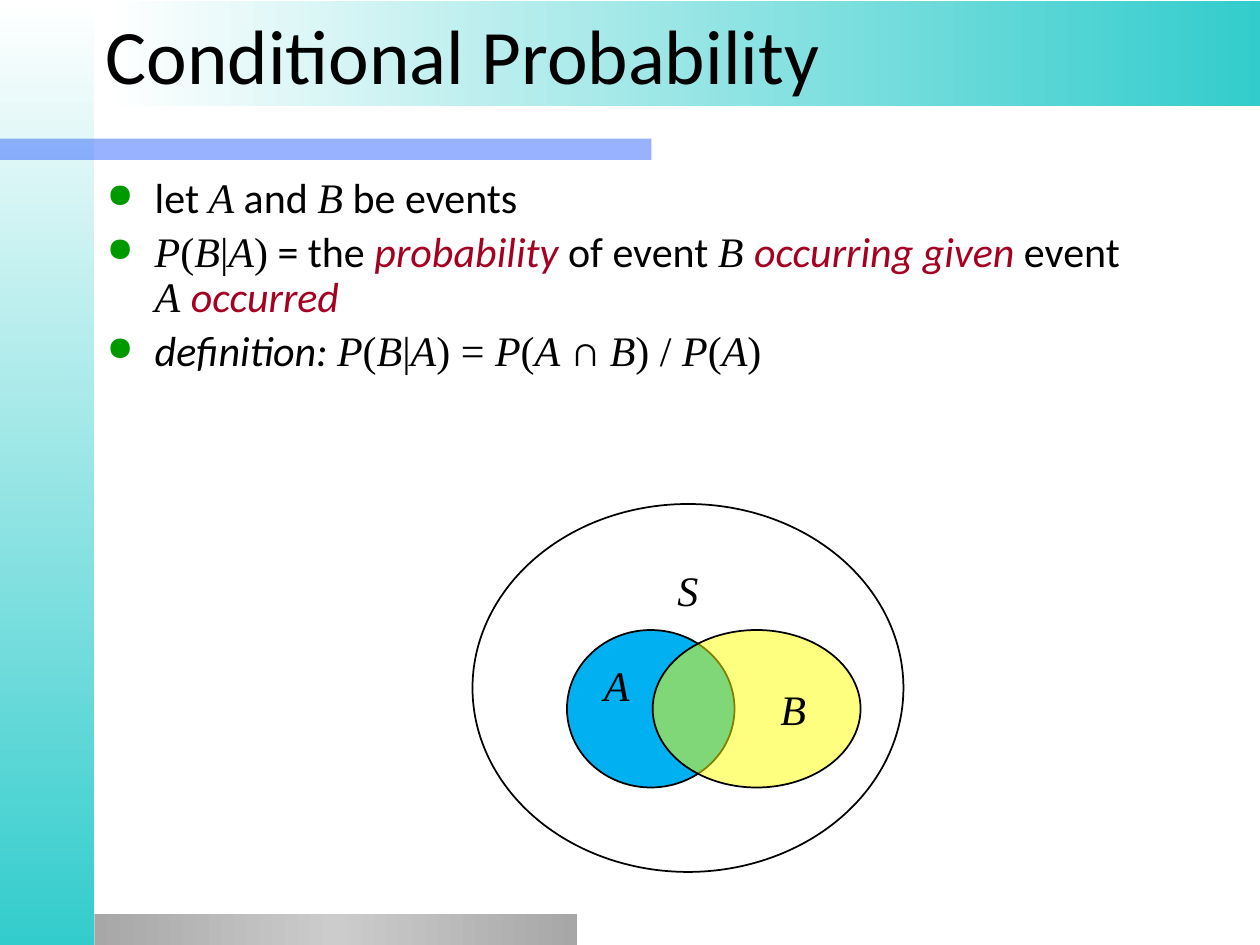
from itertools import groupby
from pptx import Presentation
from pptx.dml.color import RGBColor
from pptx.enum.shapes import MSO_SHAPE
from pptx.enum.text import MSO_ANCHOR, MSO_AUTO_SIZE, PP_ALIGN
from pptx.oxml import parse_xml
from pptx.oxml.ns import nsdecls, qn
from pptx.util import Inches, Pt

RECT, OVAL = MSO_SHAPE.RECTANGLE, MSO_SHAPE.OVAL
TOP, MIDDLE = MSO_ANCHOR.TOP, MSO_ANCHOR.MIDDLE
LEFT, CENTER = PP_ALIGN.LEFT, PP_ALIGN.CENTER
FIXED = MSO_AUTO_SIZE.NONE
WIDE, HIGH = 10, 7.5
SANS, SERIF = "Calibri", "Times New Roman"
BLACK, WHITE, TEAL, RED = "000000", "FFFFFF", "33CCCC", "A50021"
GREY, SILVER = "A7A7A7", "CCCCCC"
STYLES = {
    "plain": (SANS, False, BLACK),
    "slant": (SANS, True, BLACK),
    "key": (SANS, True, RED),
}
GIVEN = ("math", "P(B|A)")
POINTS = [
    [("plain", "let "), ("math", "A"), ("plain", " and "), ("math", "B"),
     ("plain", " be events")],
    [GIVEN, ("plain", " = the "), ("key", "probability"),
     ("plain", " of event "), ("math", "B "), ("key", "occurring given"),
     ("plain", " event "), ("math", "A "), ("key", "occurred")],
    [("slant", "definition: "), GIVEN, ("math", " = P(A "), ("plain", "∩ "),
     ("math", "B) / P(A)")],
]


def color(code):
    """Turn a hex string into a colour."""
    return RGBColor.from_string(code)


def place(shape, box):
    """Set a shape's left, top, width and height in inches."""
    shape.left, shape.top, shape.width, shape.height = map(Inches, box)


def set_font(font, name, size, italic=False, code=BLACK):
    """Set face, size, slant and colour of a font."""
    font.name, font.size, font.italic = name, Pt(size), italic
    font.color.rgb = color(code)


def fade(shape, codes, angle=0):
    """Fill a shape with evenly spaced gradient stops."""
    shape.fill.gradient()
    shape.fill.gradient_angle = angle
    stops = shape._element.spPr.find(".//" + qn("a:gsLst"))
    for stop in list(stops):
        stops.remove(stop)
    for i, code in enumerate(codes):
        spot = 100000 * i // (len(codes) - 1)
        stops.append(parse_xml(
            f'<a:gs {nsdecls("a")} pos="{spot}"><a:srgbClr val="{code}"/></a:gs>'))


def tint(shape, code, share=100):
    """Fill a shape with one colour at a percentage of opacity."""
    shape.fill.solid()
    shape.fill.fore_color.rgb = color(code)
    if share < 100:
        tone = shape._element.spPr.find(qn("a:solidFill")).find(qn("a:srgbClr"))
        tone.append(parse_xml(f'<a:alpha {nsdecls("a")} val="{share * 1000}"/>'))


def add_band(slide, box):
    """Add a rectangle with no outline."""
    band = slide.shapes.add_shape(RECT, *map(Inches, box))
    band.shadow.inherit = False
    band.line.fill.background()
    return band


def add_frame(slide, side):
    """Draw the slide's bands around a left margin of the given width."""
    fade(add_band(slide, (0, 0, side, HIGH)), (WHITE, TEAL), 270)
    tint(add_band(slide, (0, 1.1, 5.17, 0.17)), "3366FF", 50)
    fade(add_band(slide, (side, HIGH - 0.25, 3.83, 0.25)), (GREY, SILVER, GREY))
    fade(add_band(slide, (0.84, 0.01, WIDE - 0.84, 0.83)), (WHITE, TEAL))


def add_title(slide, box, text):
    """Place the title in front of the bands."""
    title = slide.shapes.title
    slide.shapes._spTree.append(title._element)
    place(title, box)
    frame = title.text_frame
    frame.text = text
    frame.auto_size, frame.vertical_anchor = FIXED, MIDDLE
    line = frame.paragraphs[0]
    line.alignment = LEFT
    set_font(line.font, SANS, 44)


def add_run(line, text, style):
    """Add a run in one style."""
    run = line.add_run()
    run.text = text
    name, italic, code = style
    set_font(run.font, name, 24, italic, code)


def add_math(line, text):
    """Add a formula with slanted letters and upright signs."""
    for italic, part in groupby(text, str.isalpha):
        add_run(line, "".join(part), (SERIF, italic, BLACK))


def add_bullet(line):
    """Give a paragraph a hanging green bullet."""
    props = line._p.get_or_add_pPr()
    props.set("marL", str(Inches(0.38)))
    props.set("indent", str(-Inches(0.38)))
    for part in ('buClr><a:srgbClr val="009900"/></a:buClr',
                 'buSzPct val="80000"/', 'buChar char="●"/'):
        head, mark, tail = part.partition(">")
        names = nsdecls("a")
        xml = (f"<a:{head} {names}>{tail}>" if mark
               else f"<a:{head[:-1]} {names}/>")
        props.append(parse_xml(xml))


def add_points(slide, box, points):
    """Write the bulleted list."""
    frame = slide.shapes.add_textbox(*map(Inches, box)).text_frame
    frame.word_wrap = True
    for i, parts in enumerate(points):
        line = frame.add_paragraph() if i else frame.paragraphs[0]
        line.line_spacing, line.space_before = 0.9, Pt(4.8)
        add_bullet(line)
        for kind, text in parts:
            if kind == "math":
                add_math(line, text)
            else:
                add_run(line, text, STYLES[kind])


def add_set(slide, box, name, code, share=100, align=CENTER, anchor=TOP, inset=0.1):
    """Draw one named set as an ellipse."""
    oval = slide.shapes.add_shape(OVAL, *map(Inches, box))
    oval.shadow.inherit = False
    tint(oval, code, share)
    oval.line.color.rgb, oval.line.width = color(BLACK), Pt(1)
    frame = oval.text_frame
    frame.text = name
    frame.vertical_anchor, frame.margin_left = anchor, Inches(inset)
    line = frame.paragraphs[0]
    line.alignment = align
    set_font(line.font, SERIF, 24, True)


def add_venn(slide, box):
    """Draw the sample space with two events that overlap."""
    left, top, wide, high = box
    row = top + 1
    add_set(slide, box, "S", WHITE)
    add_set(slide, (left + 0.75, row, 1.33, 1.25), "A", "00B0F0", align=LEFT)
    add_set(slide, (left + 1.43, row, 1.65, 1.25), "B", "FFFF00", 50,
            anchor=MIDDLE, inset=0.68)


def main():
    """Build and save the slide."""
    deck = Presentation()
    deck.slide_width, deck.slide_height = Inches(WIDE), Inches(HIGH)
    slide = deck.slides.add_slide(deck.slide_layouts[5])
    add_frame(slide, 0.75)
    add_title(slide, (0.74, 0.01, 9.26, 0.83), "Conditional Probability")
    add_points(slide, (0.75, 1.36, 8.5, 5.79), POINTS)
    add_venn(slide, (3.75, 4, 3.42, 2.92))
    deck.save("out.pptx")


if __name__ == "__main__":
    main()
